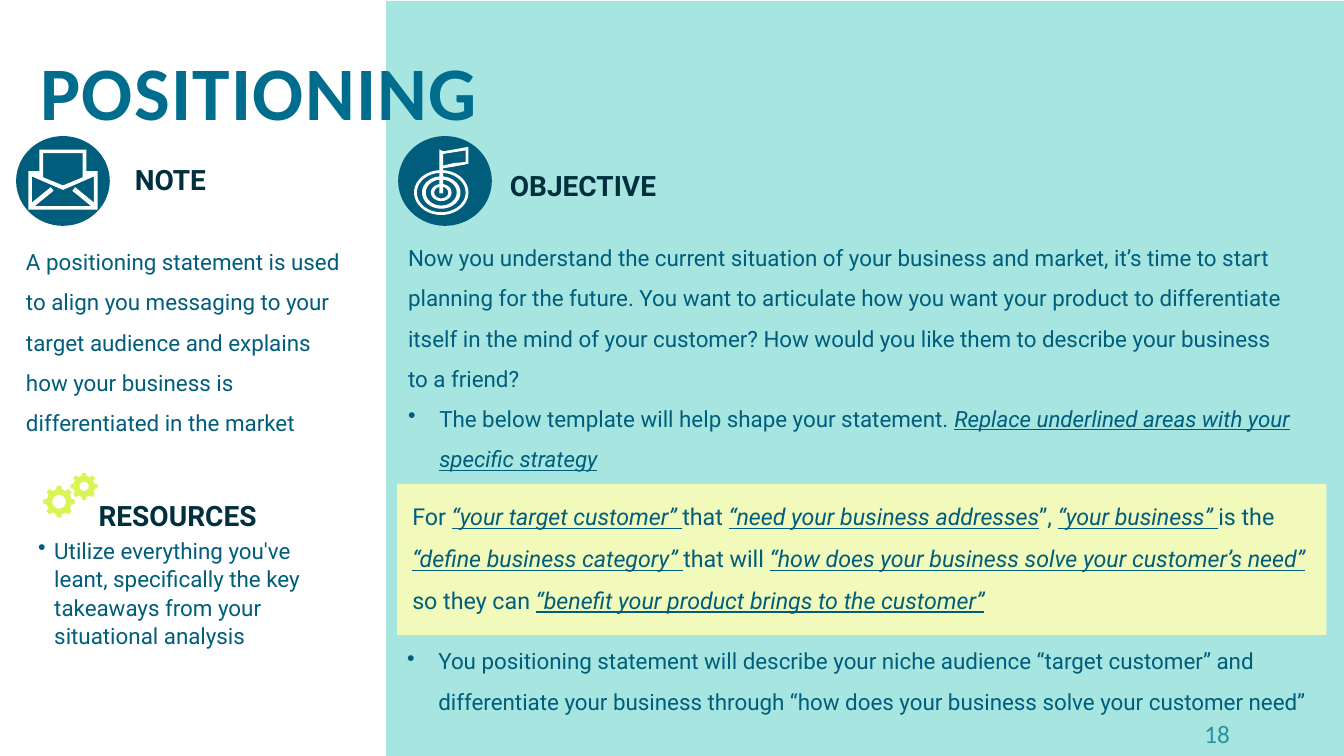
from dataclasses import dataclass
from math import cos, pi, sin

from lxml import etree
from pptx import Presentation
from pptx.dml.color import RGBColor
from pptx.enum.shapes import MSO_SHAPE
from pptx.enum.text import MSO_ANCHOR
from pptx.oxml.ns import qn
from pptx.util import Inches, Pt

RECT = MSO_SHAPE.RECTANGLE
OVAL = MSO_SHAPE.OVAL
TOP = MSO_ANCHOR.TOP
MIDDLE = MSO_ANCHOR.MIDDLE
CELL = Inches(1) / 3
COLUMNS, ROWS = 40, 22.5


@dataclass(frozen=True)
class Theme:
    title: str = "006D8F"
    body: str = "005E7C"
    heading: str = "002F3E"
    panel: str = "4ECDC3"
    callout: str = "F1FABA"
    gear: str = "DBF353"
    white: str = "FFFFFF"
    title_font: str = "Calibri"
    body_font: str = "Roboto"
    title_size: float = 54
    heading_size: float = 20
    number_size: float = 18
    callout_size: float = 16.6
    body_size: float = 16


THEME = Theme()
HEADING = dict(size=THEME.heading_size, color=THEME.heading, bold=True)

ENVELOPE = [
    [(13, 39), (25, 39), (25, 15), (75, 15), (75, 39), (87, 39), (87, 82), (13, 82)],
    [(29, 19), (71, 19), (71, 46), (50, 55), (29, 46)],
    [(63, 57), (60, 61), (80, 78), (20, 78), (40, 61), (37, 57),
     (17, 74), (17, 45), (50, 60), (83, 45), (83, 74)],
]
FLAG = [
    [(44, 15), (48, 17), (60, 15), (75, 12), (75, 31), (60, 34), (48, 36), (48, 64), (44, 64)],
    [(48, 20), (60, 18), (72, 16), (72, 29), (60, 30), (48, 33)],
]
RING_RADII = [(29, 25), (26, 22), (20.5, 18), (16.5, 14.5), (11, 9.5), (7.5, 6.5)]


def grid(*cells):
    return [round(c * CELL) for c in cells]


def ellipse(cx, cy, rx, ry, steps=48):
    turns = [2 * pi * i / steps for i in range(steps)]
    return [(cx + rx * cos(t), cy + ry * sin(t)) for t in turns]


def gear(cx, cy, rx, ry, hole, teeth=8):
    outline = []
    for i in range(teeth):
        for offset, reach in ((-0.28, 0.8), (-0.18, 1), (0.18, 1), (0.28, 0.8)):
            t = 2 * pi * (i + offset) / teeth
            outline.append((cx + reach * rx * cos(t), cy + reach * ry * sin(t)))
    return [outline, ellipse(cx, cy, rx * hole, ry * hole)]


def paint(sp, color, alpha=None):
    sp.shadow.inherit = False
    sp.line.fill.background()
    sp.fill.solid()
    sp.fill.fore_color.rgb = RGBColor.from_string(color)
    if alpha:
        clr = sp.fill._xPr.find(".//" + qn("a:srgbClr"))
        etree.SubElement(clr, qn("a:alpha")).set("val", str(alpha * 1000))
    return sp


def block(shapes, kind, box, color, alpha=None):
    return paint(shapes.add_shape(kind, *grid(*box)), color, alpha)


def outline(shapes, box, contours, color):
    x, y, w, h = grid(*box)
    placed = [[(x + px * w / 100, y + py * h / 100) for px, py in c] for c in contours]
    fb = shapes.build_freeform(*placed[0][0], scale=1.0)
    for i, points in enumerate(placed):
        if i:
            fb.move_to(*points[0])
        fb.add_line_segments(points[1:], close=True)
    return paint(fb.convert_to_shape(), color)


def badge(s, box, *icons):
    shapes = s.shapes.add_group_shape().shapes
    block(shapes, OVAL, box, THEME.body)
    for contours in icons:
        outline(shapes, box, contours, THEME.white)


def write(tf, text, size=THEME.body_size, font=THEME.body_font, color=THEME.body,
          bold=False, spacing=1.5, after=0, margin=0, bullet=False, tracking=0):
    p = tf.paragraphs[0] if not tf.text else tf.add_paragraph()
    p.line_spacing = spacing
    p.space_after = Pt(after)
    ppr = p._p.get_or_add_pPr()
    ppr.set("marL", str(Inches(margin)))
    ppr.set("indent", str(-Inches(margin) if bullet else 0))
    if bullet:
        etree.SubElement(ppr, qn("a:buChar")).set("char", "•")
    for i, part in enumerate(text.split("_")):
        if not part:
            continue
        r = p.add_run()
        r.text = part
        r.font.size = Pt(size)
        r.font.name = font
        r.font.bold = bold
        r.font.color.rgb = RGBColor.from_string(color)
        if i % 2:
            r.font.italic = r.font.underline = True
        if tracking:
            r.font._element.set("spc", str(tracking * 100))


def text_box(s, box, anchor=TOP):
    tf = s.shapes.add_textbox(*grid(*box)).text_frame
    tf.word_wrap = True
    tf.vertical_anchor = anchor
    return tf


def callout(s, box, text):
    tf = block(s.shapes, RECT, box, THEME.callout).text_frame
    tf.word_wrap = True
    tf.vertical_anchor = TOP
    tf.margin_left = tf.margin_right = tf.margin_top = tf.margin_bottom = Inches(0.05)
    write(tf, text, size=THEME.callout_size, margin=0.1)
    tf.paragraphs[0].alignment = 1


def main():
    prs = Presentation()
    prs.slide_width, prs.slide_height = grid(COLUMNS, ROWS)
    s = prs.slides.add_slide(prs.slide_layouts[6])

    write(text_box(s, (35.55, 21.24, 3.18, 0.9)), "18", size=THEME.number_size,
          font=THEME.title_font, spacing=1.0)
    block(s.shapes, RECT, (11.49, 0.03, 28.51, 22.47), THEME.panel, alpha=50)
    write(text_box(s, (0.9, 0.48, 31.89, 4.92), MIDDLE), "POSITIONING",
          size=THEME.title_size, font=THEME.title_font, color=THEME.title,
          bold=True, spacing=0.8, tracking=1)

    tf = text_box(s, (11.85, 6.72, 26.88, 5.31))
    write(tf, "Now you understand the current situation of your business and market, "
              "it’s time to start planning for the future. You want to articulate how you "
              "want your product to differentiate itself in the mind of your customer? "
              "How would you like them to describe your business to a friend?")
    write(tf, "The below template will help shape your statement. "
              "_Replace underlined areas with your specific strategy_",
          margin=0.31, bullet=True)

    rings = [ellipse(46, 63, rx, ry) for rx, ry in RING_RADII]
    badge(s, (11.85, 4.05, 2.79, 2.67), rings, FLAG)
    callout(s, (11.82, 14.4, 27.66, 4.5),
            "For _“your target customer” _that _“need your business addresses_”, "
            "_“your business” _is the _“define business category” _that will "
            "_“how does your business solve your customer’s need”_ so they can "
            "_“benefit your product brings to the customer”_")
    badge(s, (0.48, 4.05, 2.79, 2.67), ENVELOPE)

    write(text_box(s, (0.48, 6.84, 10.08, 6.27)),
          "A positioning statement is used to align you messaging to your target "
          "audience and explains how your business is differentiated in the market")
    write(text_box(s, (3.72, 4.2, 6.81, 1.68)), "NOTE", **HEADING)
    write(text_box(s, (14.88, 4.38, 21.51, 2.31)), "OBJECTIVE", **HEADING)

    tf = text_box(s, (0.84, 14.19, 8.76, 5.25))
    write(tf, "RESOURCES", margin=0.6, after=2, **HEADING)
    write(tf, "Utilize everything you've leant, specifically the key takeaways "
              "from your situational analysis",
          spacing=Pt(20.4), margin=0.16, bullet=True)
    outline(s.shapes, (1.29, 14.07, 1.62, 1.35),
            gear(29, 64, 29, 35, 0.43) + gear(75, 30, 25, 30, 0.34), THEME.gear)

    write(text_box(s, (11.82, 18.72, 27.63, 3.78)),
          "You positioning statement will describe your niche audience “target "
          "customer” and differentiate your business through “how does your business "
          "solve your customer need”", margin=0.31, bullet=True)

    prs.save("out.pptx")


if __name__ == "__main__":
    main()
